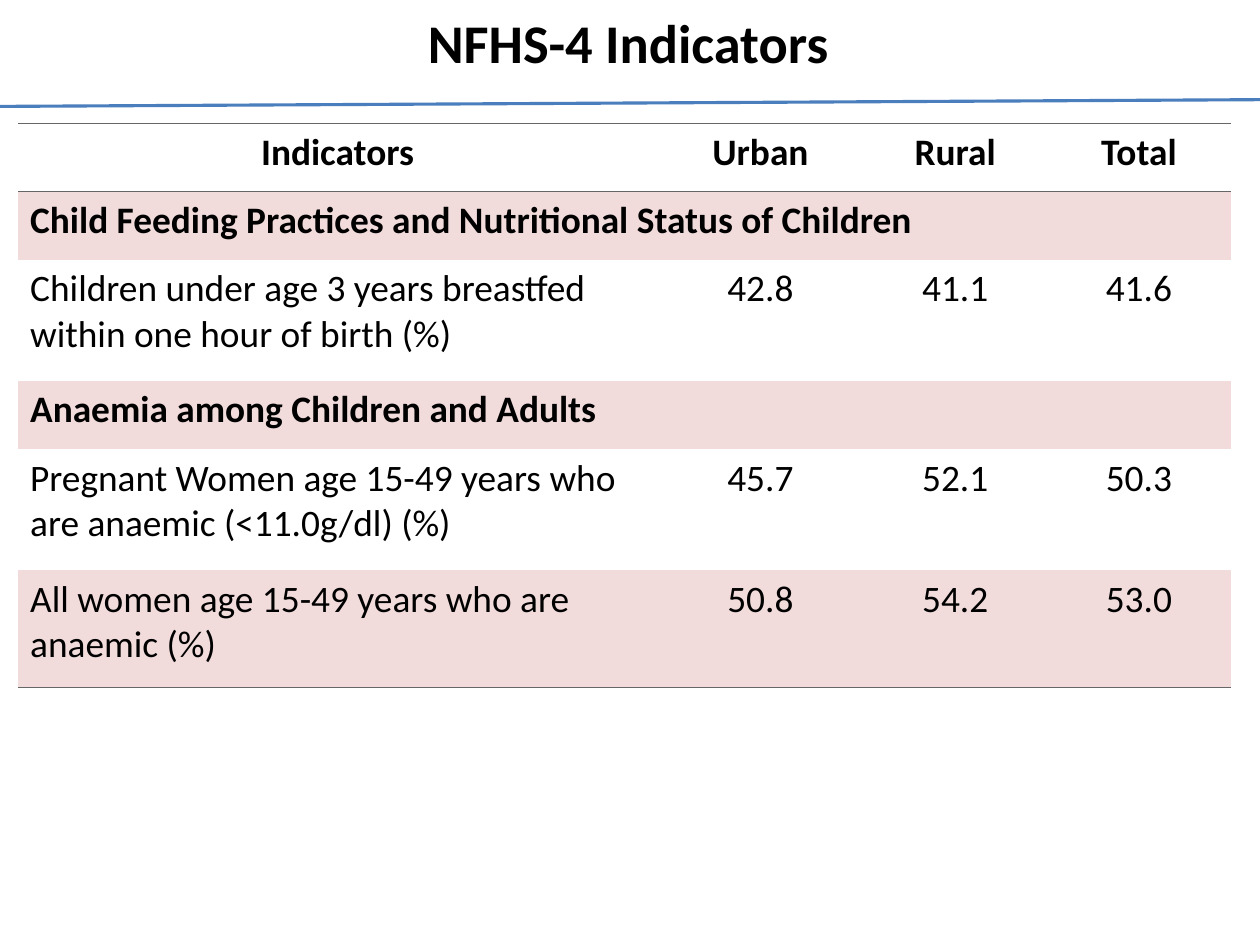
from lxml import etree
from pptx import Presentation
from pptx.dml.color import RGBColor
from pptx.enum.shapes import MSO_CONNECTOR
from pptx.enum.text import MSO_ANCHOR, PP_ALIGN
from pptx.oxml import parse_xml
from pptx.oxml.ns import nsdecls, qn
from pptx.util import Inches, Pt


def color(value):
    return RGBColor.from_string(value)


def add_text(text_frame, text, size, bold, alignment):
    paragraph = text_frame.paragraphs[0]
    paragraph.alignment = alignment
    run = paragraph.add_run()
    run.text = text
    run.font.name = "Calibri"
    run.font.size = Pt(size)
    run.font.bold = bold
    run.font.color.rgb = color("000000")


presentation = Presentation()
presentation.slide_width = Inches(11.25)
presentation.slide_height = Inches(8.5)
slide = presentation.slides.add_slide(presentation.slide_layouts[6])

title = slide.shapes.add_textbox(Inches(0.55), Inches(0.03), Inches(10.12), Inches(0.9))
title.text_frame.word_wrap = True
add_text(title.text_frame, "NFHS-4 Indicators", 35, True, PP_ALIGN.CENTER)

rows = [
    ["Indicators", "Urban", "Rural", "Total"],
    ["Child Feeding Practices and Nutritional Status of Children"],
    ["Children under age 3 years breastfed within one hour of birth (%)", "42.8", "41.1", "41.6"],
    ["Anaemia among Children and Adults"],
    ["Pregnant Women age 15-49 years who are anaemic (<11.0g/dl) (%)", "45.7", "52.1", "50.3"],
    ["All women age 15-49 years who are anaemic (%)", "50.8", "54.2", "53.0"],
]
column_widths = [5.71, 1.84, 1.64, 1.64]
row_heights = [0.61, 0.61, 1.08, 0.61, 1.08, 1.05]
borders = {0: ["lnB", "lnT"], len(rows) - 1: ["lnB"]}

table = slide.shapes.add_table(
    len(rows), len(column_widths), Inches(0.16), Inches(1.1),
    Inches(sum(column_widths)), Inches(sum(row_heights)),
).table
table.first_row = False
table.horz_banding = False
table._tbl.tblPr.find(qn("a:tableStyleId")).text = "{2D5ABB26-0587-4C30-8999-92F81FD0307C}"
for column, width in zip(table.columns, column_widths):
    column.width = Inches(width)
for row, height in zip(table.rows, row_heights):
    row.height = Inches(height)

for row_index, texts in enumerate(rows):
    is_section = len(texts) == 1
    if is_section:
        table.cell(row_index, 0).merge(table.cell(row_index, len(column_widths) - 1))
    for column_index in range(len(column_widths)):
        cell = table.cell(row_index, column_index)
        cell.margin_left = cell.margin_right = Inches(0.11)
        cell.margin_top = cell.margin_bottom = Inches(0.06)
        cell.vertical_anchor = MSO_ANCHOR.TOP
        if row_index % 2:
            cell.fill.solid()
            cell.fill.fore_color.rgb = color("F2DCDB")
        else:
            cell.fill.background()
        for side in borders.get(row_index, []):
            cell._tc.get_or_add_tcPr().insert(0, parse_xml(
                f'<a:{side} {nsdecls("a")} w="9525"><a:solidFill>'
                f'<a:srgbClr val="666666"/></a:solidFill></a:{side}>'
            ))
        if column_index < len(texts):
            centered = row_index == 0 or column_index > 0
            add_text(
                cell.text_frame, texts[column_index], 24, row_index == 0 or is_section,
                PP_ALIGN.CENTER if centered else PP_ALIGN.LEFT,
            )

divider = slide.shapes.add_connector(
    MSO_CONNECTOR.STRAIGHT, Inches(0), Inches(0.95), Inches(11.25), Inches(0.89)
)
divider.line.color.rgb = color("4B7EBC")
divider.line.width = Pt(2)
etree.SubElement(divider._element.spPr, qn("a:effectLst"))

presentation.save("out.pptx")
